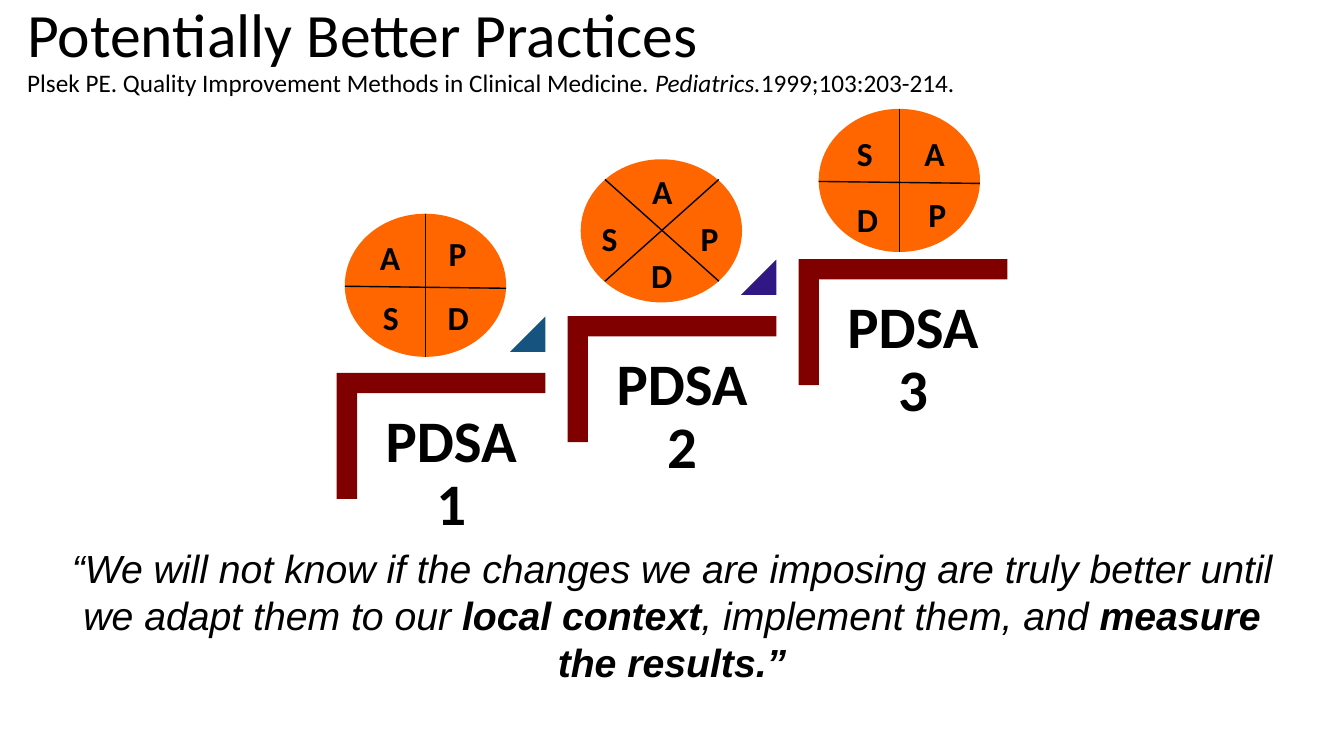
"""Build the slide of three PDSA wheels climbing a staircase."""
from lxml import etree
from pptx import Presentation
from pptx.dml.color import RGBColor
from pptx.enum.shapes import MSO_CONNECTOR as Link, MSO_SHAPE as Shape
from pptx.enum.text import MSO_ANCHOR as Anchor, MSO_AUTO_SIZE as Fit, PP_ALIGN as Align
from pptx.oxml.ns import qn
from pptx.util import Inches, Pt


def paint(fill, tone):
    fill.solid()
    fill.fore_color.rgb = RGBColor.from_string(tone)


def write(para, text, size=24, face="Calibri", bold=False, italic=False):
    run = para.add_run()
    run.text = text
    font = run.font
    font.size, font.name, font.bold, font.italic = Pt(size), face, bold, italic
    paint(font.fill, "000000")


deck = Presentation()
deck.slide_width, deck.slide_height = Inches(13.33), Inches(7.5)
slide = deck.slides.add_slide(deck.slide_layouts[5])
shapes = slide.shapes

title = shapes.title
title.left, title.top, title.width, title.height = map(Inches, (0.17, -0.54, 11.5, 2.09))
frame = title.text_frame
frame.word_wrap, frame.auto_size, frame.vertical_anchor = True, Fit.NONE, Anchor.MIDDLE
head = frame.paragraphs[0]
head.alignment, head.line_spacing = Align.LEFT, 0.9
write(head, "Potentially Better Practices", size=44)
head.add_line_break()
write(head, "Plsek PE. Quality Improvement Methods in Clinical Medicine. ", size=18)
write(head, "Pediatrics.", size=18, italic=True)
write(head, "1999;103:203-214.", size=18)

for step in range(3):
    left, top = 3.54 + 2.29 * step, 3.91 - 0.565 * step
    stair = shapes.add_shape(
        Shape.CORNER, *map(Inches, (left + 0.21, top - 0.62, 1.25, 2.07)))
    stair.rotation = 90
    stair.adjustments[0] = stair.adjustments[1] = 0.161
    parts = [(stair, "800000")]
    if step < 2:
        wedge = shapes.add_shape(
            Shape.ISOSCELES_TRIANGLE, *map(Inches, (left + 1.52, top - 0.77, 0.35, 0.35)))
        wedge.adjustments[0] = 1
        parts.append((wedge, ("16537F", "311783")[step]))
    for part, tone in parts:
        paint(part.fill, tone)
        part.line.fill.background()
        part.shadow.inherit = False

    frame = shapes.add_textbox(*map(Inches, (left, top, 1.87, 1.64))).text_frame
    frame.word_wrap = True
    frame.margin_left = frame.margin_right = Inches(0.17)
    frame.margin_top = frame.margin_bottom = Inches(0.17)
    label = frame.paragraphs[0]
    label.alignment, label.line_spacing = Align.CENTER, 0.9
    write(label, f"PDSA {step + 1}", size=42, bold=True)

cross = [(0.8, 0, 0.8, 1.42), (0, 0.72, 1.6, 0.74)]
slant = [(0.24, 1.21, 1.37, 0.2), (0.24, 0.2, 1.37, 1.21)]
wheels = [
    (3.42, 2.12, cross, [(0.93, 0.14), (0.92, 0.78), (0.28, 0.78), (0.25, 0.18)]),
    (5.76, 1.58, slant, [(1.09, 0.53), (0.6, 0.9), (0.11, 0.53), (0.61, 0.07)]),
    (8.12, 1.08, cross, [(0.99, 0.79), (0.28, 0.84), (0.28, 0.19), (0.95, 0.19)]),
]
for left, top, spokes, spots in wheels:
    disc = shapes.add_shape(Shape.OVAL, *map(Inches, (left, top, 1.6, 1.42)))
    paint(disc.fill, "FF6600")
    disc.line.fill.background()
    disc.shadow.inherit = False
    for x1, y1, x2, y2 in spokes:
        spoke = shapes.add_connector(
            Link.STRAIGHT, *map(Inches, (left + x1, top + y1, left + x2, top + y2)))
        paint(spoke.line.fill, "000000")
        spoke.line.width = Pt(1)
        etree.SubElement(spoke._element.spPr, qn("a:effectLst"))
    for mark, wide, (x, y) in zip("PDSA", (0.52, 0.41, 0.34, 0.43), spots):
        box = shapes.add_textbox(*map(Inches, (left + x, top + y, wide, 0.5)))
        box.text_frame.word_wrap = True
        write(box.text_frame.paragraphs[0], mark, bold=True)

frame = shapes.add_textbox(*map(Inches, (0.44, 5.35, 12.45, 1.72))).text_frame
frame.word_wrap = True
quote = frame.paragraphs[0]
quote.alignment = Align.CENTER
for text, bold in [
    ("“We will not know if the changes we are imposing are truly better until "
     "we adapt them to our ", False),
    ("local context", True),
    (", implement them, and ", False),
    ("measure the results.”", True),
]:
    write(quote, text, size=28, face="Arial", bold=bold, italic=True)

deck.save("out.pptx")
